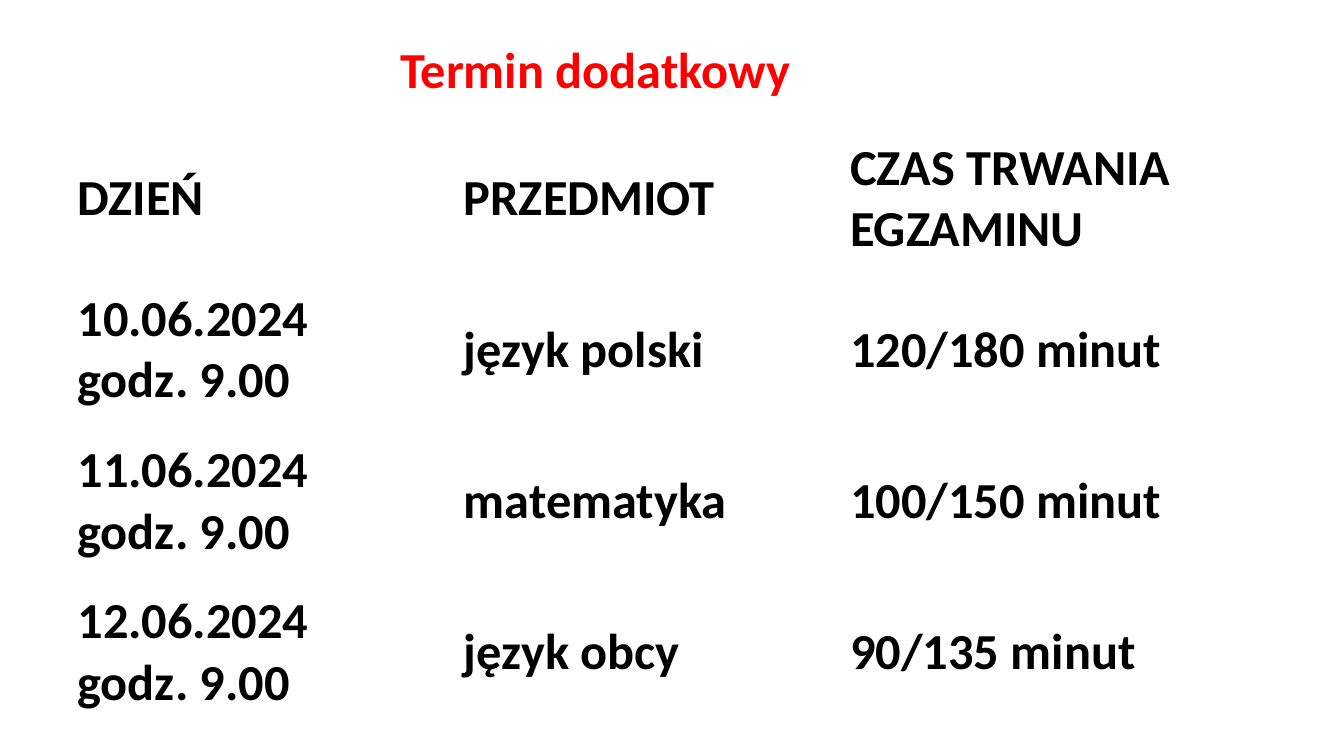
from pptx import Presentation
from pptx.dml.color import RGBColor
from pptx.enum import text
from pptx.util import Cm, Pt

COLORS = {"title": "FF0000", "body": "000000"}
NO_STYLE = "{2D5ABB26-0587-4C30-8999-92F81FD0307C}"


def set_font(p, color):
    p.font.name = "Calibri"
    p.font.size = Pt(36)
    p.font.bold = True
    p.font.color.rgb = RGBColor.from_string(COLORS[color])


prs = Presentation()
prs.slide_width, prs.slide_height = Cm(33.87), Cm(19.05)
s = prs.slides.add_slide(prs.slide_layouts[5])

title = s.shapes.title
title.left, title.top, title.width, title.height = Cm(9.78), Cm(0.81), Cm(10.44), Cm(1.8)
tf = title.text_frame
tf.text = "Termin dodatkowy"
tf.word_wrap = False
tf.auto_size = text.MSO_AUTO_SIZE.SHAPE_TO_FIT_TEXT
tf.vertical_anchor = text.MSO_ANCHOR.MIDDLE
p = tf.paragraphs[0]
p.alignment = text.PP_ALIGN.CENTER
set_font(p, "title")

rows = [
    ("DZIEŃ", "PRZEDMIOT", "CZAS TRWANIA EGZAMINU"),
    ("10.06.2024\ngodz. 9.00", "język polski", "120/180 minut"),
    ("11.06.2024\ngodz. 9.00", "matematyka", "100/150 minut"),
    ("12.06.2024\ngodz. 9.00", "język obcy", "90/135 minut"),
]
frame = s.shapes.add_table(len(rows), 3, Cm(1.7), Cm(3.1), Cm(29.21), Cm(15.24))
table = frame.table
table.first_row = False
table.horz_banding = False
for style_id in frame._element.iter("{*}tableStyleId"):
    style_id.text = NO_STYLE

for i, row in enumerate(rows):
    for j, value in enumerate(row):
        cell = table.cell(i, j)
        cell.text = value
        cell.fill.background()
        cell.vertical_anchor = text.MSO_ANCHOR.MIDDLE
        for p in cell.text_frame.paragraphs:
            set_font(p, "body")

prs.save("out.pptx")
